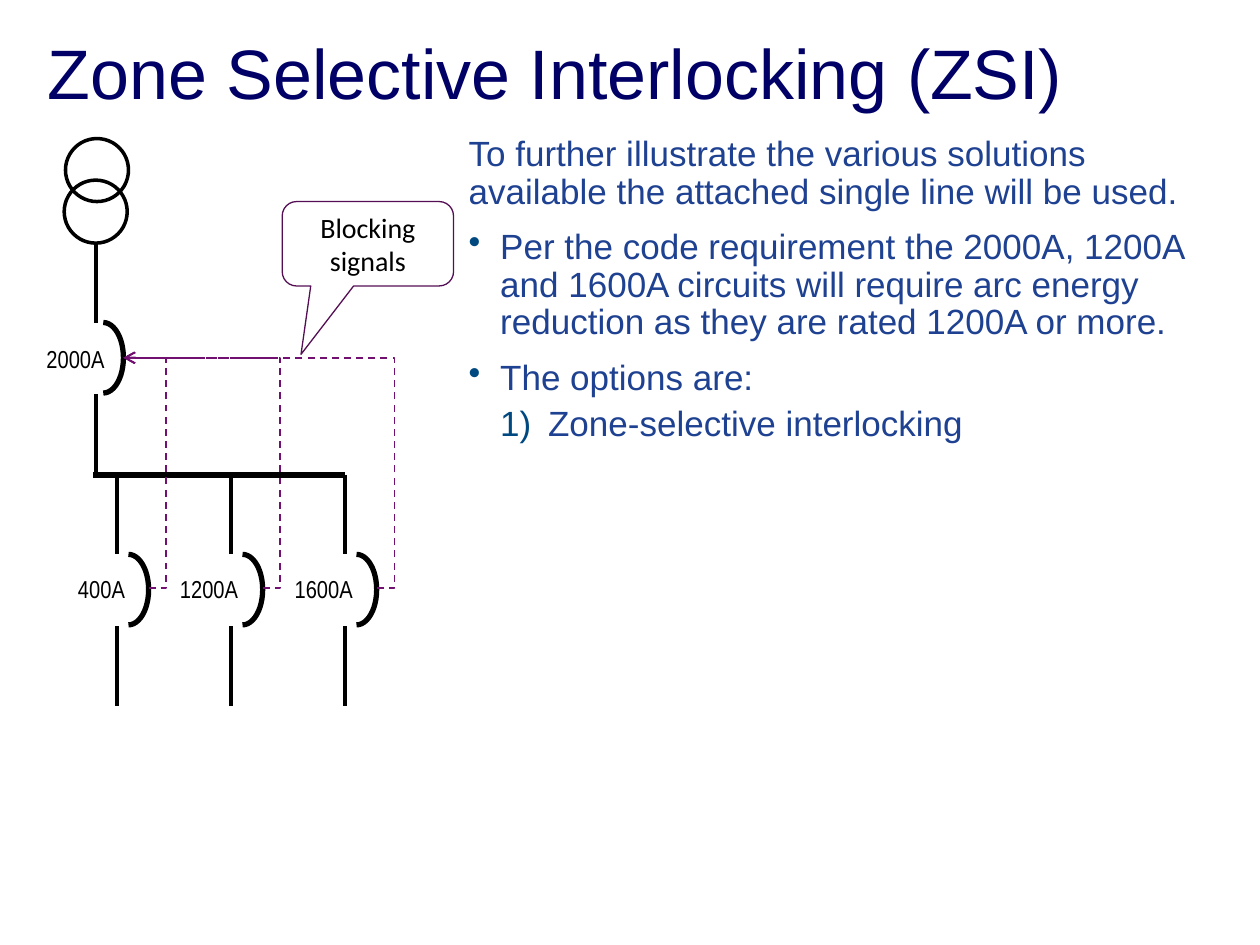
from lxml import etree
from pptx import Presentation
from pptx.dml.color import RGBColor
from pptx.enum.dml import MSO_LINE
from pptx.enum.shapes import MSO_CONNECTOR, MSO_SHAPE
from pptx.enum.text import MSO_ANCHOR, MSO_AUTO_SIZE, PP_ALIGN
from pptx.oxml.ns import qn
from pptx.util import Inches, Pt

STRAIGHT, ELBOW = MSO_CONNECTOR.STRAIGHT, MSO_CONNECTOR.ELBOW
OVAL, BRACKET = MSO_SHAPE.OVAL, MSO_SHAPE.RIGHT_BRACKET
CALLOUT = MSO_SHAPE.ROUNDED_RECTANGULAR_CALLOUT
DASH = MSO_LINE.DASH
MIDDLE, CENTER = MSO_ANCHOR.MIDDLE, PP_ALIGN.CENTER
FIT, NO_FIT = MSO_AUTO_SIZE.SHAPE_TO_FIT_TEXT, MSO_AUTO_SIZE.NONE

NAVY = RGBColor(0x00, 0x00, 0x66)
BLUE = RGBColor(0x1E, 0x41, 0x91)
BLACK = RGBColor(0x00, 0x00, 0x00)
PURPLE = RGBColor(0x71, 0x10, 0x71)
PLUM = RGBColor(0x54, 0x0E, 0x54)
TEAL = "004880"

TITLE = "Zone Selective Interlocking (ZSI)"
BODY = [
    ("To further illustrate the various solutions available the attached "
     "single line will be used.", None),
    ("Per the code requirement the 2000A, 1200A and 1600A circuits will "
     "require arc energy reduction as they are rated 1200A or more.", "dot"),
    ("The options are:", "dot"),
    ("Zone-selective interlocking", "number"),
]
MARKS = {
    "dot": (0.25, 0.25, "buChar", {"char": "•"}),
    "number": (0.63, 0.38, "buAutoNum", {"type": "arabicParenR"}),
}
MAIN = ("2000A", 0.27)
FEEDS = [("400A", 0.52), ("1200A", 1.33), ("1600A", 2.24)]
RINGS = [(0.51, 1.43), (0.52, 1.1)]
MAIN_X, MAIN_TOP = 0.76, 1.93
FEED_X, FEED_GAP = 0.93, 0.905
BUS_Y = 3.77
LEAD, DROP = 0.63, 1.83
TARGET = (0.98, 2.84)

prs = Presentation()
prs.slide_width, prs.slide_height = Inches(10), Inches(7.5)
slide = prs.slides.add_slide(prs.slide_layouts[6])
shapes = slide.shapes


def style(para, size, face, color):
    para.font.size = Pt(size)
    para.font.name = face
    para.font.color.rgb = color


def add_text(left, top, width, height):
    box = shapes.add_textbox(*map(Inches, (left, top, width, height)))
    return box.text_frame


def add_block(left, top, width, height):
    frame = add_text(left, top, width, height)
    frame.word_wrap = True
    frame.auto_size = NO_FIT
    frame.margin_left = frame.margin_right = 0
    frame.margin_top = frame.margin_bottom = 0
    return frame


def add_label(text, left, top):
    frame = add_text(left, top, 0.58 if len(text) < 5 else 0.67, 0.34)
    frame.word_wrap = False
    frame.auto_size = FIT
    frame.text = text
    style(frame.paragraphs[0], 14, "Arial Narrow", BLACK)


def add_line(parent, kind, start, end, color, width):
    line = parent.add_connector(kind, *map(Inches, start + end))
    line.line.color.rgb = color
    line.line.width = Pt(width)
    etree.SubElement(line._element.spPr, qn("a:effectLst"))
    return line


def add_shape(parent, kind, left, top, width, height, color, weight):
    shape = parent.add_shape(kind, *map(Inches, (left, top, width, height)))
    shape.shadow.inherit = False
    shape.fill.background()
    shape.line.color.rgb = color
    shape.line.width = Pt(weight)
    return shape


def add_breaker(x, top, gap):
    group = shapes.add_group_shape().shapes
    for y in (top, top + DROP - LEAD):
        add_line(group, STRAIGHT, (x, y), (x, y + LEAD), BLACK, 2.25)
    arc = add_shape(group, BRACKET, x + gap, top + LEAD, 0.16, 0.56, BLACK, 3)
    arc.adjustments[0] = 1.75


def add_signal(x):
    start = (x + 0.25, 4.67)
    line = add_line(shapes, ELBOW, start, TARGET, PURPLE, 1)
    line.line.dash_style = DASH
    bend = -0.14 / (start[0] - TARGET[0])
    guides = line._element.spPr.find(qn("a:prstGeom")).get_or_add_avLst()
    etree.SubElement(guides, qn("a:gd"), name="adj1",
                     fmla=f"val {round(bend * 100000)}")
    etree.SubElement(line.line._get_or_add_ln(), qn("a:tailEnd"), type="arrow")


def add_mark(para, mark):
    left, hang, tag, attrs = MARKS[mark]
    props = para._p.get_or_add_pPr()
    props.set("marL", str(Inches(left)))
    props.set("indent", str(-Inches(hang)))
    color = etree.SubElement(props, qn("a:buClr"))
    etree.SubElement(color, qn("a:srgbClr"), val=TEAL)
    etree.SubElement(props, qn("a:" + tag), attrs)


head = add_block(0.38, 0.31, 9.25, 0.56)
head.text = TITLE
head.paragraphs[0].line_spacing = 0.9
style(head.paragraphs[0], 40, "Arial", NAVY)

body = add_block(3.72, 1.08, 5.9, 5.87)
body.text = "\n".join(text for text, mark in BODY)
for para, (text, mark) in zip(body.paragraphs, BODY):
    nested = mark == "number"
    para.level = 1 if nested else 0
    para.line_spacing = 0.85 if nested else 0.9
    para.space_before = Pt(6 if nested else 10)
    if mark:
        add_mark(para, mark)
    style(para, 20, "Arial", BLUE)

feed_xs = [FEED_X + i * FEED_GAP for i in range(len(FEEDS))]
add_breaker(MAIN_X, MAIN_TOP, 0.06)
for x in feed_xs:
    add_breaker(x, BUS_Y, 0.09)
add_line(shapes, STRAIGHT, (0.74, BUS_Y), (2.74, BUS_Y), BLACK, 3)

add_label(*MAIN, 2.68)
for text, left in FEEDS:
    add_label(text, left, 4.51)
for left, top in RINGS:
    add_shape(shapes, OVAL, left, top, 0.5, 0.5, BLACK, 2)
for x in feed_xs:
    add_signal(x)

note = add_shape(shapes, CALLOUT, 2.24, 1.6, 1.36, 0.67, PLUM, 0.75)
for i, value in enumerate((-0.39, 1.31, 0.17)):
    note.adjustments[i] = value
frame = note.text_frame
frame.word_wrap = True
frame.vertical_anchor = MIDDLE
frame.text = "Blocking signals"
frame.paragraphs[0].alignment = CENTER
style(frame.paragraphs[0], 16, "Calibri", BLACK)

prs.save("out.pptx")
